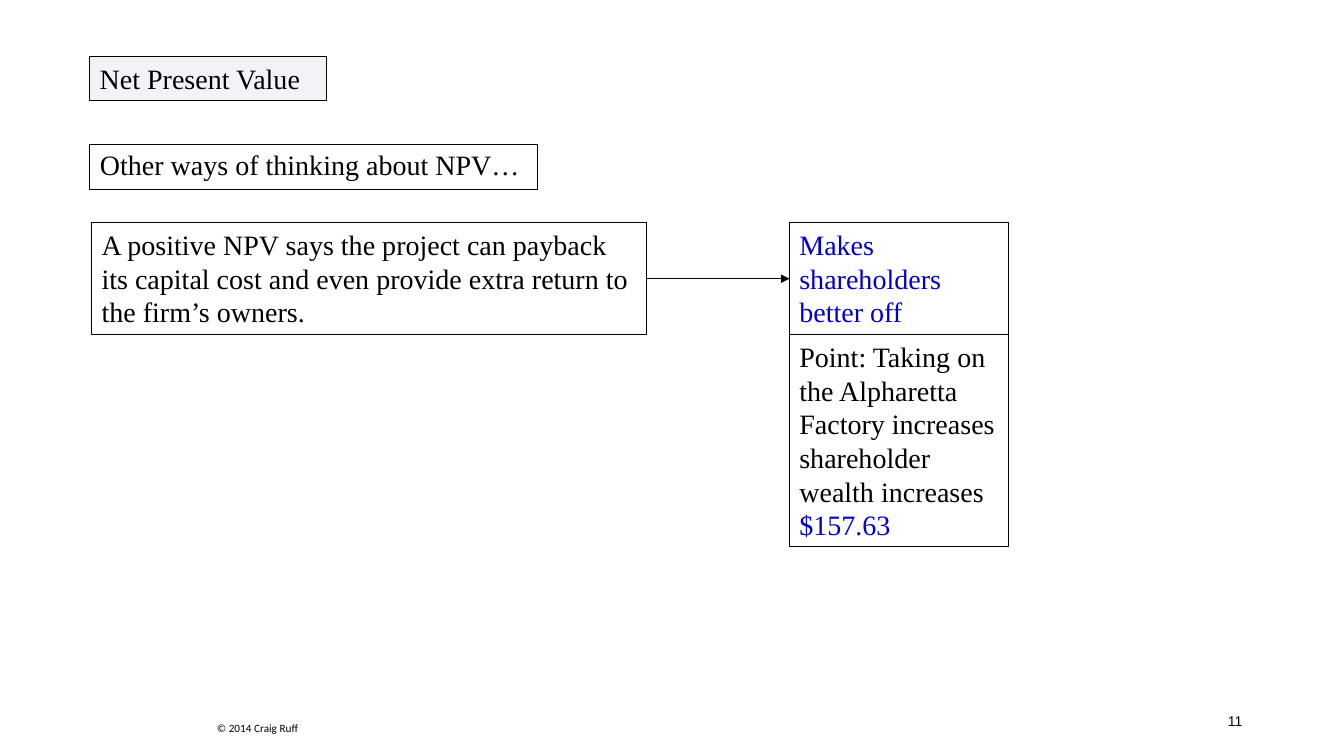
from dataclasses import dataclass

from lxml.etree import SubElement
from pptx import Presentation
from pptx.dml.color import RGBColor as Rgb
from pptx.enum.shapes import MSO_CONNECTOR as Link, MSO_SHAPE as Kind
from pptx.enum.text import MSO_ANCHOR as Anchor, MSO_AUTO_SIZE as Fit, PP_ALIGN as Align
from pptx.oxml.ns import qn
from pptx.util import Inches, Pt

HUES = {"ink": "000000", "blue": "0000CC", "navy": "002060"}
SERIF = "Times New Roman"
LEFT, RIGHT = 1, 3  # connection sites of a rectangle


@dataclass
class Run:
    text: str
    hue: str = "ink"
    size: float = 20
    font: str = SERIF


@dataclass
class Box:
    left: float
    top: float
    width: float
    height: float
    runs: list[Run]
    tint: bool = False


@dataclass
class Note:
    left: float
    top: float
    width: float
    height: float
    run: Run
    align: Align
    anchor: Anchor


def place(shape, item: Box | Note) -> None:
    shape.left, shape.top = Inches(item.left), Inches(item.top)
    shape.width, shape.height = Inches(item.width), Inches(item.height)


def write(shape, runs: list[Run], align: Align, anchor: Anchor):
    frame = shape.text_frame
    frame.word_wrap = True
    frame.auto_size = Fit.NONE
    frame.vertical_anchor = anchor
    para = frame.paragraphs[0]
    para.alignment = align
    for item in runs:
        run = para.add_run()
        run.text = item.text
        run.font.size, run.font.name = Pt(item.size), item.font
        run.font.color.rgb = Rgb.from_string(HUES[item.hue])
    return para


def edge(shape) -> None:
    shape.line.color.rgb = Rgb.from_string(HUES["ink"])
    shape.line.width = Pt(0.75)


def add_title(slide, box: Box) -> None:
    title = slide.shapes.title
    place(title, box)
    edge(title)
    para = write(title, box.runs, Align.LEFT, Anchor.MIDDLE)
    para.line_spacing = 0.9


def add_box(slide, box: Box):
    shape = slide.shapes.add_shape(Kind.RECTANGLE, 0, 0, 0, 0)
    place(shape, box)
    shape.shadow.inherit = False
    edge(shape)
    if box.tint:
        shape.fill.solid()
        shape.fill.fore_color.rgb = Rgb.from_string(HUES["navy"])
        hue = shape.fill._xPr.find(qn("a:solidFill"))[0]
        SubElement(hue, qn("a:alpha"), val="5000")
    else:
        shape.fill.background()
    write(shape, box.runs, Align.LEFT, Anchor.TOP)
    return shape


def add_arrow(slide, start, end) -> None:
    line = slide.shapes.add_connector(Link.STRAIGHT, 0, 0, 0, 0)
    line.begin_connect(start, RIGHT)
    line.end_connect(end, LEFT)
    edge(line)
    SubElement(line.line._get_or_add_ln(), qn("a:tailEnd"), type="triangle")
    SubElement(line._element.spPr, qn("a:effectLst"))


def add_note(slide, note: Note) -> None:
    shape = slide.shapes.add_textbox(0, 0, 0, 0)
    place(shape, note)
    write(shape, [note.run], note.align, note.anchor)


TITLE = Box(0.89, 1.43, 4.44, 0.45, [Run("Other ways of thinking about NPV…")])
CLAIM = Box(0.91, 2.21, 5.5, 1.11, [Run(
    "A positive NPV says the project can payback its capital cost "
    "and even provide extra return to the firm’s owners.")])
EFFECT = Box(7.83, 2.21, 2.17, 1.11, [Run("Makes shareholders better off", "blue")])
POINT = Box(7.83, 3.32, 2.17, 2.1, [
    Run("Point: Taking on the Alpharetta Factory increases "
        "shareholder wealth increases "),
    Run("$157.63", "blue")])
TOPIC = Box(0.89, 0.56, 2.35, 0.44, [Run("Net Present Value")], tint=True)
NOTES = [
    Note(9.42, 6.95, 3, 0.4, Run("11", size=10, font="Arial"),
         Align.RIGHT, Anchor.MIDDLE),
    Note(1.95, 7.11, 1.21, 0.24, Run("© 2014 Craig Ruff", size=8, font="Calibri"),
         Align.CENTER, Anchor.TOP),
]


def main() -> None:
    deck = Presentation()
    deck.slide_width, deck.slide_height = Inches(13.33), Inches(7.5)
    slide = deck.slides.add_slide(deck.slide_layouts[5])
    add_title(slide, TITLE)
    claim, effect, *_ = [add_box(slide, box) for box in (CLAIM, EFFECT, POINT, TOPIC)]
    add_arrow(slide, claim, effect)
    for note in NOTES:
        add_note(slide, note)
    deck.save("out.pptx")


if __name__ == "__main__":
    main()
